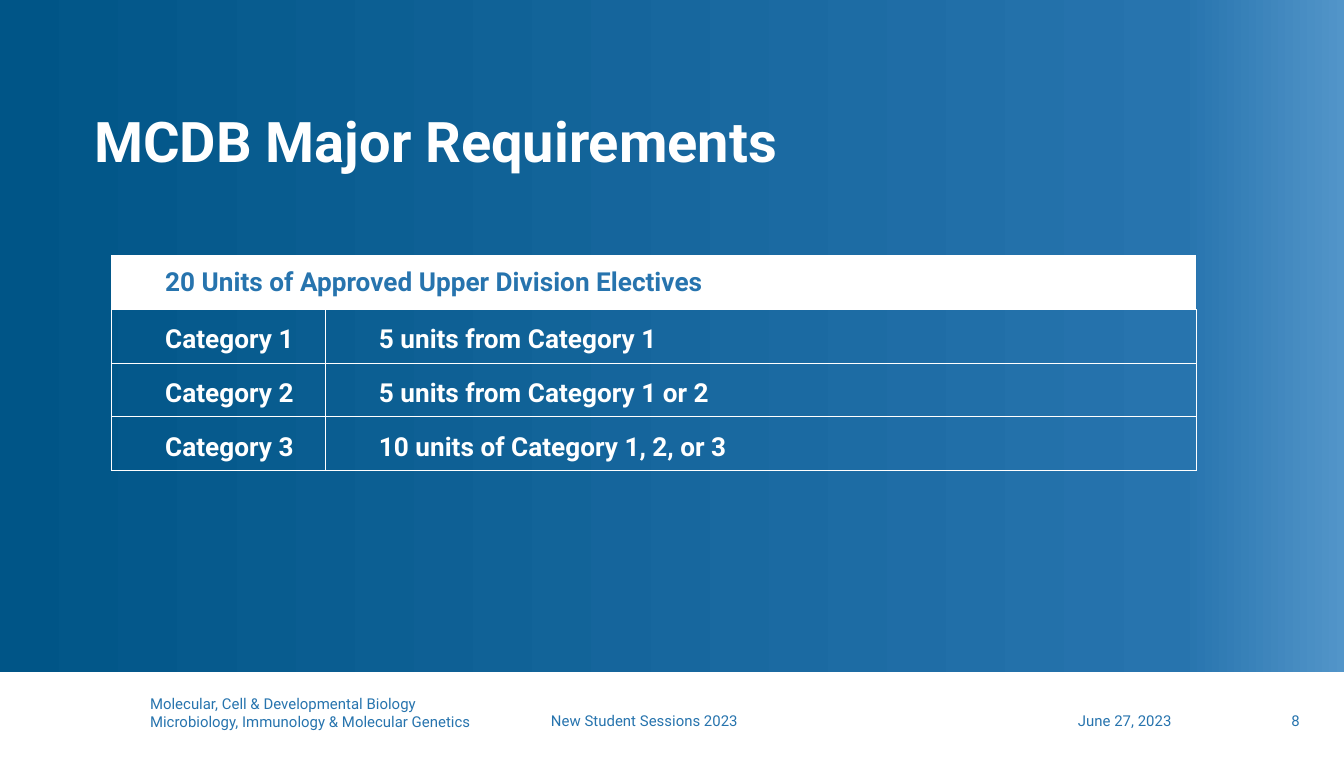
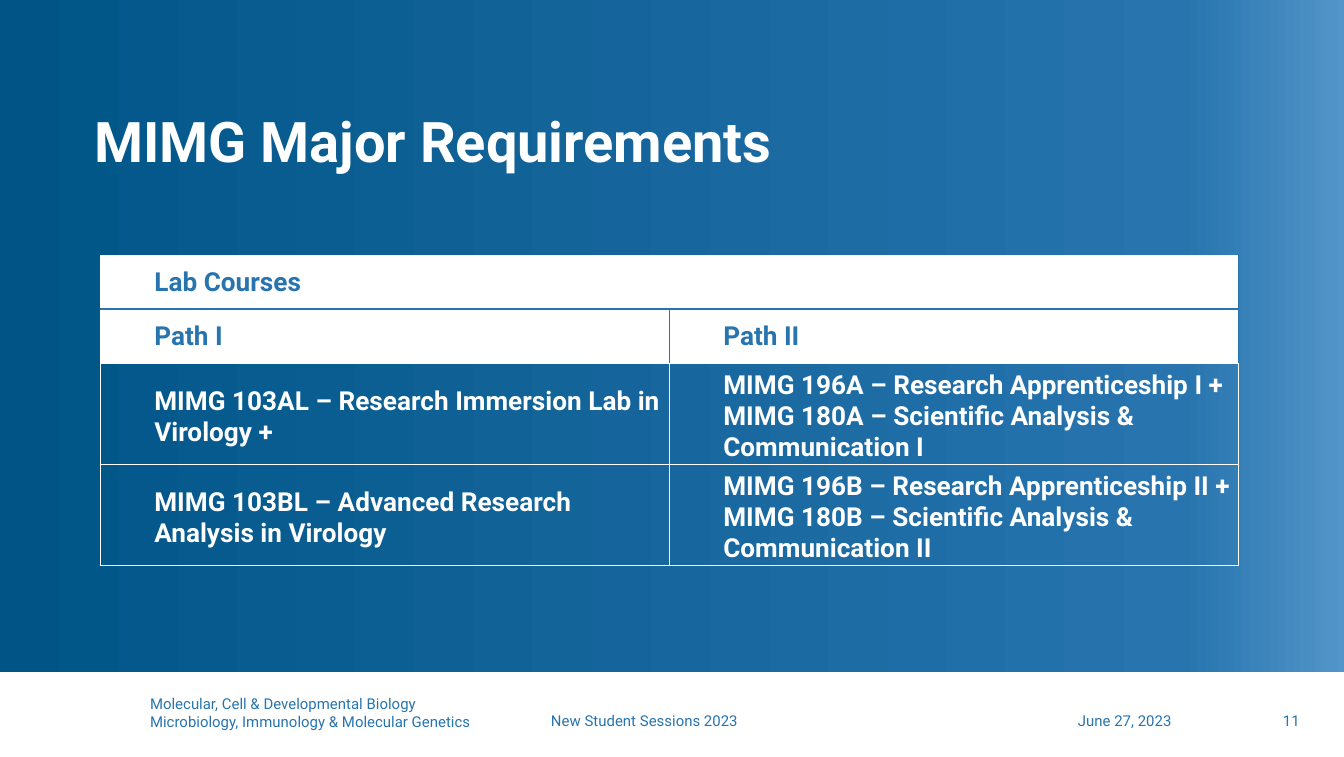
from dataclasses import dataclass

from lxml import etree
from pptx import Presentation
from pptx.dml.color import RGBColor
from pptx.enum.shapes import MSO_SHAPE
from pptx.enum.text import MSO_ANCHOR, MSO_AUTO_SIZE, PP_ALIGN
from pptx.oxml.ns import qn
from pptx.util import Pt

RECTANGLE = MSO_SHAPE.RECTANGLE
TOP, MIDDLE, BOTTOM = MSO_ANCHOR.TOP, MSO_ANCHOR.MIDDLE, MSO_ANCHOR.BOTTOM
LEFT, RIGHT = PP_ALIGN.LEFT, PP_ALIGN.RIGHT
GROW = MSO_AUTO_SIZE.SHAPE_TO_FIT_TEXT

COLORS = {"navy": "005587", "blue": "2774AE", "sky": "5295C9", "white": "FFFFFF"}
BACKGROUND_STOPS = ((0, "navy"), (88, "blue"), (100, "sky"))
FONT = "Roboto"
SLIDE_WIDTH, SLIDE_HEIGHT = 720, 405.36
BAND_TOP = 360
FOOTER_TOP, FOOTER_HEIGHT = 380.5, 10.8
TABLE_TOP, ROW_HEIGHT = 136.8, 28.8
CELL_INDENT, BODY_INSET_TOP = 28.8, 3.6
THIN, THICK = 0.5, 1


@dataclass(frozen=True)
class Label:
    """Text box; bounds are left, top, width, height in points."""
    bounds: tuple[float, float, float, float]
    lines: tuple[str, ...]
    size: float = 8
    color: str = "blue"
    bold: bool = False
    align: PP_ALIGN = LEFT
    anchor: MSO_ANCHOR = BOTTOM
    inset_left: float = 7.2
    inset_y: float = 0.72
    line_spacing: float = 1.0


@dataclass(frozen=True)
class Requirements:
    """Slide content; a row with one text spans all columns."""
    title: str
    number: int
    left: float
    height: float
    columns: tuple[float, ...]
    headings: tuple[tuple[str, ...], ...]
    courses: tuple[tuple[str, ...], ...]


FOOTERS = (
    Label((80.4, 371.6, 208.8, 20.2),
          ("Molecular, Cell & Developmental Biology",
           "Microbiology, Immunology & Molecular Genetics"), inset_left=0),
    Label((295.2, FOOTER_TOP, 230.4, FOOTER_HEIGHT),
          ("New Student Sessions 2023",), inset_left=0),
    Label((526.8, FOOTER_TOP, 108, FOOTER_HEIGHT), ("June 27, 2023",), align=RIGHT),
)

SLIDES = (
    Requirements(
        "MCDB Major Requirements", 8, 59.7, 115.2, (114.5, 466.7),
        (("20 Units of Approved Upper Division Electives",),),
        (("Category 1", "5 units from Category 1"),
         ("Category 2", "5 units from Category 1 or 2"),
         ("Category 3", "10 units of Category 1, 2, or 3"))),
    Requirements(
        "MIMG Major Requirements", 11, 53.9, 164.9, (304.8, 304.8),
        (("Lab Courses",), ("Path I", "Path II")),
        (("MIMG 103AL – Research Immersion Lab in Virology +",
          "MIMG 196A – Research Apprenticeship I + MIMG 180A – "
          "Scientific Analysis & Communication I"),
         ("MIMG 103BL – Advanced Research Analysis in Virology",
          "MIMG 196B – Research Apprenticeship II + MIMG 180B – "
          "Scientific Analysis & Communication II"))),
)


def rgb(name: str) -> RGBColor:
    return RGBColor.from_string(COLORS[name])


def style(paragraph, size: float, color: str, bold: bool) -> None:
    font = paragraph.font
    font.name, font.size, font.bold = FONT, Pt(size), bold
    font.color.rgb = rgb(color)


def paint_background(slide) -> None:
    fill = slide.background.fill
    fill.gradient()
    fill.gradient_angle = 0
    stops = slide.element.find(".//" + qn("a:gsLst"))
    for stop in list(stops):
        stops.remove(stop)
    for percent, color in BACKGROUND_STOPS:
        stop = etree.SubElement(stops, qn("a:gs"), pos=str(percent * 1000))
        etree.SubElement(stop, qn("a:srgbClr"), val=COLORS[color])


def draw_label(slide, label: Label) -> None:
    frame = slide.shapes.add_textbox(*map(Pt, label.bounds)).text_frame
    frame.word_wrap = True
    frame.auto_size = GROW
    frame.vertical_anchor = label.anchor
    frame.margin_left, frame.margin_right = Pt(label.inset_left), Pt(7.2)
    frame.margin_top = frame.margin_bottom = Pt(label.inset_y)
    frame.text = "\n".join(label.lines)
    for paragraph in frame.paragraphs:
        paragraph.alignment = label.align
        paragraph.line_spacing = label.line_spacing
        style(paragraph, label.size, label.color, label.bold)


def draw_frame(slide, content: Requirements) -> None:
    """Background, footer band, footers and title."""
    paint_background(slide)
    band = slide.shapes.add_shape(
        RECTANGLE, 0, Pt(BAND_TOP), Pt(SLIDE_WIDTH), Pt(SLIDE_HEIGHT - BAND_TOP))
    band.shadow.inherit = False
    band.fill.solid()
    band.fill.fore_color.rgb = rgb("white")
    band.line.fill.background()

    page_number = Label((640.8, FOOTER_TOP, 62.6, FOOTER_HEIGHT),
                        (str(content.number),), align=RIGHT)
    title = Label((43.4, 57.6, 576, 40.3), (content.title,), size=30, color="white",
                  bold=True, anchor=TOP, inset_y=3.6, line_spacing=0.9)
    for label in (*FOOTERS, page_number, title):
        draw_label(slide, label)


def set_borders(cell, borders: dict[str, tuple[str, float]]) -> None:
    """Borders go before the fill, in the order L, R, T, B."""
    properties = cell._tc.get_or_add_tcPr()
    for position, side in enumerate("LRTB"):
        color, width = borders[side]
        line = etree.Element(qn(f"a:ln{side}"), w=str(Pt(width)))
        fill = etree.SubElement(line, qn("a:solidFill"))
        etree.SubElement(fill, qn("a:srgbClr"), val=COLORS[color])
        properties.insert(position, line)


def format_cell(cell, text: str, heading: bool) -> None:
    cell.text = text
    cell.vertical_anchor = MIDDLE
    cell.margin_left = Pt(CELL_INDENT)
    cell.margin_top = Pt(0 if heading else BODY_INSET_TOP)
    cell.margin_right = cell.margin_bottom = 0
    if heading:
        cell.fill.solid()
        cell.fill.fore_color.rgb = rgb("white")
    else:
        cell.fill.background()
    style(cell.text_frame.paragraphs[0], 14, "blue" if heading else "white", True)


def draw_table(slide, content: Requirements) -> None:
    rows = content.headings + content.courses
    graphic = slide.shapes.add_table(
        len(rows), len(content.columns), Pt(content.left), Pt(TABLE_TOP),
        Pt(sum(content.columns)), Pt(content.height))
    table = graphic.table
    table.first_row = table.horz_banding = False
    for column, width in zip(table.columns, content.columns):
        column.width = Pt(width)

    white, blue, divider = ("white", THIN), ("blue", THIN), ("blue", THICK)
    last_heading = len(content.headings) - 1
    for r, texts in enumerate(rows):
        table.rows[r].height = Pt(ROW_HEIGHT)
        heading = r <= last_heading
        spans = len(texts) == 1
        for c in range(len(content.columns)):
            cell = table.cell(r, c)
            format_cell(cell, texts[c] if c < len(texts) else "", heading)
            borders = dict.fromkeys("LRTB", white)
            if heading:
                borders["R"] = blue
                if c and not spans:
                    borders["L"] = blue
                if r:
                    borders["T"] = divider
                if r < last_heading:
                    borders["B"] = divider
            set_borders(cell, borders)
        if spans:
            table.cell(r, 0).merge(table.cell(r, len(content.columns) - 1))
    graphic.height = Pt(content.height)


def main() -> None:
    deck = Presentation()
    deck.slide_width, deck.slide_height = Pt(SLIDE_WIDTH), Pt(SLIDE_HEIGHT)
    for content in SLIDES:
        slide = deck.slides.add_slide(deck.slide_layouts[6])
        draw_frame(slide, content)
        draw_table(slide, content)
    deck.save("out.pptx")


if __name__ == "__main__":
    main()
